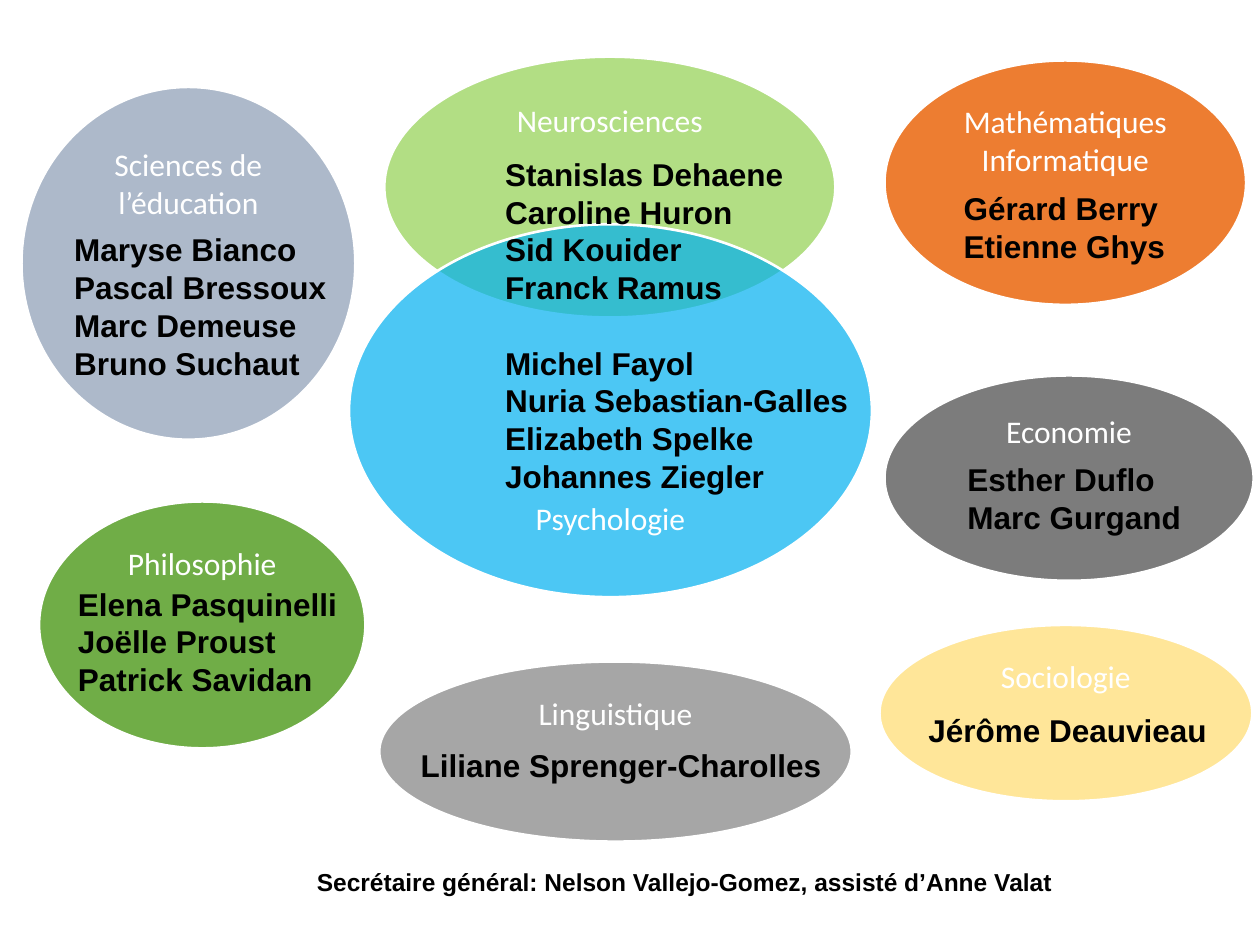
from dataclasses import dataclass

from lxml import etree
from pptx import Presentation
from pptx.dml.color import RGBColor
from pptx.enum.shapes import MSO_SHAPE
from pptx.enum.text import MSO_ANCHOR, MSO_AUTO_SIZE, PP_ALIGN
from pptx.oxml.ns import qn
from pptx.util import Inches, Pt

OVAL = MSO_SHAPE.OVAL
TOP, BOTTOM = MSO_ANCHOR.TOP, MSO_ANCHOR.BOTTOM
LEFT, CENTER = PP_ALIGN.LEFT, PP_ALIGN.CENTER
GROW = MSO_AUTO_SIZE.SHAPE_TO_FIT_TEXT
BLANK = 6

# Grid: 100 columns by 75 rows of equal cells
WIDE, HIGH = Inches(10), Inches(7.5)
COLS, ROWS = 100, 75


@dataclass(frozen=True)
class Theme:
    label: str = "Calibri"
    body: str = "Arial"
    size: float = 18
    small: float = 14
    edge: float = 1.5
    gap: float = 21.5
    white: str = "FFFFFF"
    black: str = "000000"
    sand: str = "FFE699"
    green: str = "70AD47"
    lime: str = "92D050"
    sky: str = "00B0F0"
    slate: str = "ADB9CA"
    gray: str = "7C7C7C"
    orange: str = "ED7D31"
    silver: str = "A6A6A6"


THEME = Theme()


@dataclass(frozen=True)
class Field:
    """A discipline: its oval, and the members listed over it."""
    label: str
    oval: tuple
    fill: str
    spot: tuple = ()
    names: str = ""
    alpha: int = 100
    anchor: MSO_ANCHOR = TOP


FIELDS = [
    Field("Sociologie", (69.8, 49.6, 29.6, 14), THEME.sand,
          (72.7, 55.9, 24.3, 4), "Jérôme Deauvieau"),
    Field("Philosophie", (3.1, 39.8, 25.9, 19.6), THEME.green,
          (5.2, 45.9, 22.8, 10.1),
          "Elena Pasquinelli\nJoëlle Proust\nPatrick Savidan"),
    Field("Neurosciences", (30.5, 4.5, 35.8, 20.7), THEME.lime, alpha=70),
    # One list serves both overlapping ovals; a blank line parts the groups
    Field("Psychologie", (27.7, 17.8, 41.5, 29.6), THEME.sky,
          (39.1, 11.8, 29.5, 28.3),
          "Stanislas Dehaene\nCaroline Huron\nSid Kouider\nFranck Ramus\n\n"
          "Michel Fayol\nNuria Sebastian-Galles\nElizabeth Spelke\n"
          "Johannes Ziegler", alpha=70, anchor=BOTTOM),
    Field("Sciences de l’éducation", (1.7, 6.9, 26.5, 28), THEME.slate,
          (4.9, 17.8, 22.2, 13.1),
          "Maryse Bianco\nPascal Bressoux\nMarc Demeuse\nBruno Suchaut"),
    Field("Economie", (70.2, 29.8, 29.3, 16.3), THEME.gray,
          (75.8, 36, 19.1, 10.1), "Esther Duflo\nMarc Gurgand"),
    Field("Mathématiques\nInformatique", (70.2, 4.8, 28.7, 19.4),
          THEME.orange, (75.5, 14.5, 18.1, 7.1),
          "Gérard Berry\nEtienne Ghys"),
    Field("Linguistique", (30.1, 52.5, 37.5, 14.3), THEME.silver,
          (32.4, 58.7, 34.1, 4), "Liliane Sprenger-Charolles"),
]


def place(box):
    """Turn grid columns and rows into slide lengths."""
    x, y, w, h = box
    return [round(n) for n in (x * WIDE / COLS, y * HIGH / ROWS,
                               w * WIDE / COLS, h * HIGH / ROWS)]


def write(frame, text, font, size, color, align, bold=False):
    """Write one paragraph a line; an empty line becomes a gap."""
    first = True
    for group in text.split("\n\n"):
        for i, line in enumerate(group.split("\n")):
            para = frame.paragraphs[0] if first else frame.add_paragraph()
            para.text = line
            para.alignment = align
            if i == 0 and not first:
                para.space_before = Pt(THEME.gap)
            face = para.font
            face.name, face.size, face.bold = font, Pt(size), bold
            face.color.rgb = RGBColor.from_string(color)
            first = False


def add_oval(slide, field):
    oval = slide.shapes.add_shape(OVAL, *place(field.oval))
    oval.shadow.inherit = False
    oval.fill.solid()
    oval.fill.fore_color.rgb = RGBColor.from_string(field.fill)
    if field.alpha < 100:
        tint = oval.fill._xPr.find(f".//{qn('a:srgbClr')}")
        etree.SubElement(tint, qn("a:alpha"), val=str(field.alpha * 1000))
    oval.line.color.rgb = RGBColor.from_string(THEME.white)
    oval.line.width = Pt(THEME.edge)
    frame = oval.text_frame
    frame.word_wrap = True
    frame.vertical_anchor = field.anchor
    write(frame, field.label, THEME.label, THEME.size, THEME.white, CENTER)


def add_text(slide, box, text, size, align=LEFT, wrap=False):
    frame = slide.shapes.add_textbox(*place(box)).text_frame
    frame.word_wrap = wrap
    frame.auto_size = GROW
    write(frame, text, THEME.body, size, THEME.black, align, bold=True)


def main():
    deck = Presentation()
    deck.slide_width, deck.slide_height = WIDE, HIGH
    slide = deck.slides.add_slide(deck.slide_layouts[BLANK])

    # Disciplines and their members
    for field in FIELDS:
        add_oval(slide, field)
        if field.names:
            add_text(slide, field.spot, field.names, THEME.size)

    # Closing line
    add_text(slide, (23.7, 68.3, 61.3, 3.4),
             "Secrétaire général: Nelson Vallejo-Gomez, "
             "assisté d’Anne Valat", THEME.small, CENTER, wrap=True)
    deck.save("out.pptx")


if __name__ == "__main__":
    main()
